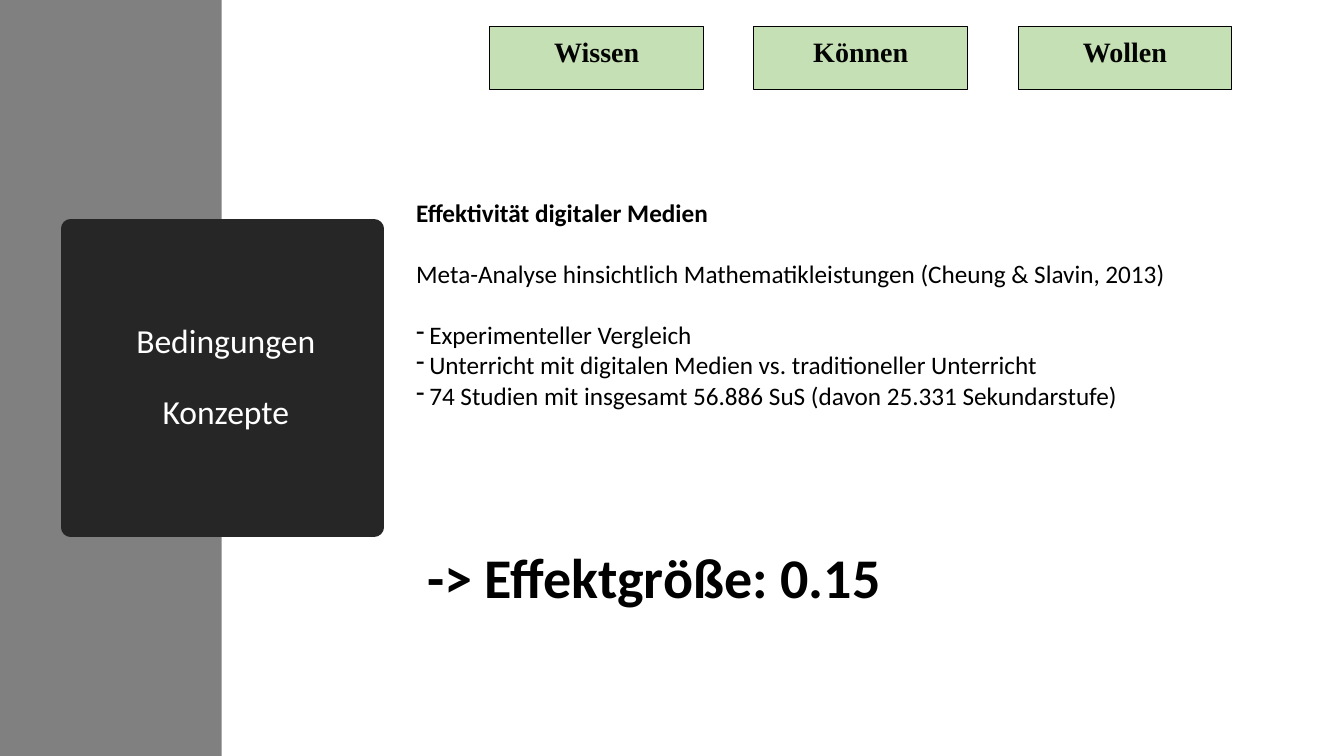
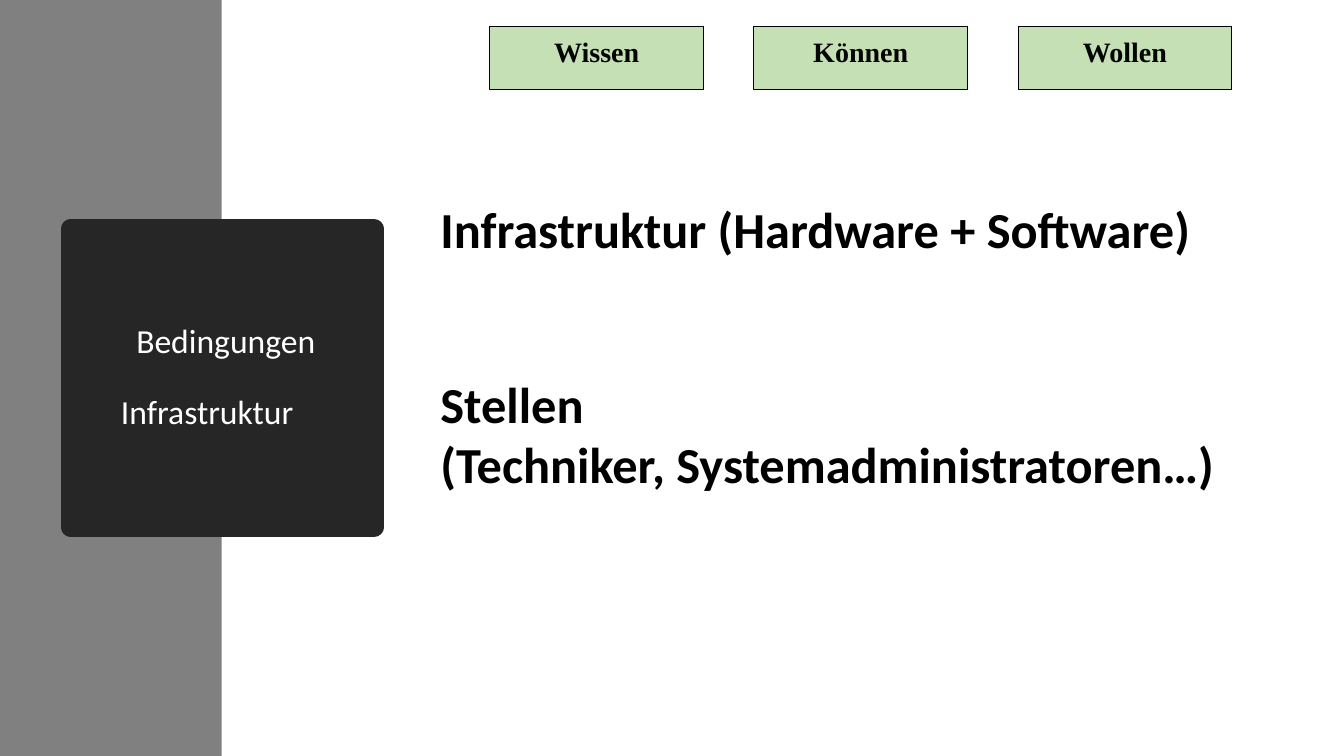
from pptx import Presentation
from pptx.dml.color import RGBColor
from pptx.enum.shapes import MSO_SHAPE as Shape
from pptx.enum.text import MSO_ANCHOR as Anchor, MSO_AUTO_SIZE as AutoSize, PP_ALIGN as Align
from pptx.oxml.ns import qn
from pptx.util import Inches, Pt
from lxml import etree

# Colours
GREY = RGBColor(0x80, 0x80, 0x80)
CHARCOAL = RGBColor(0x26, 0x26, 0x26)
GREEN = RGBColor(0xC5, 0xE0, 0xB4)
BLACK = RGBColor(0x00, 0x00, 0x00)
SOFT_BLACK = RGBColor(0x04, 0x04, 0x04)
WHITE = RGBColor(0xFF, 0xFF, 0xFF)

# Text styles
TITLE = dict(name="Calibri", size=Pt(24), bold=False, color=WHITE)
CHIP = dict(name="Times New Roman", size=Pt(20), bold=True, color=SOFT_BLACK)
BODY = dict(name="Calibri", size=Pt(18), bold=False, color=BLACK)
STRONG = {**BODY, "bold": True}
HEADING = {**STRONG, "size": Pt(36)}
RESULT = {**STRONG, "size": Pt(40)}

CHIPS = ("Wissen", "Können", "Wollen")


def set_all(target, values):
    for name, value in values.items():
        setattr(target, name, value)


class Deck:
    """Holds the style and the current page; lengths are percent of the slide."""

    def __init__(self):
        self.deck = Presentation()
        self.deck.slide_width = Inches(13.33)
        self.deck.slide_height = Inches(7.5)
        self.page = None

    def place(self, left, top, width, height):
        across, down = self.deck.slide_width / 100, self.deck.slide_height / 100
        return [round(length) for length in
                (left * across, top * down, width * across, height * down)]

    def paragraph(self, frame, text, style, first=False, gap=0,
                  align=Align.LEFT, indent=0, bullet=None):
        para = frame.paragraphs[0] if first else frame.add_paragraph()
        props = para._p.get_or_add_pPr()
        if indent:
            props.set("marL", str(Inches(indent)))
        if bullet:
            props.set("indent", str(-Inches(indent)))
            etree.SubElement(props, qn("a:buChar")).set("char", bullet)
        set_all(para, dict(alignment=align, space_before=Pt(gap)))
        span = para.add_run()
        span.text = text
        set_all(span.font, {key: value for key, value in style.items() if key != "color"})
        span.font.color.rgb = style["color"]
        return para

    def block(self, area, fill):
        shape = self.page.shapes.add_shape(Shape.RECTANGLE, *self.place(*area))
        shape.shadow.inherit = False
        shape.fill.solid()
        shape.fill.fore_color.rgb = fill
        shape.line.fill.background()
        return shape

    def chip(self, column, label):
        shape = self.block((36.45 + 19.65 * column, 3.47, 15.9, 8.4), GREEN)
        shape.line.color.rgb = BLACK
        shape.line.width = Pt(0.75)
        frame = shape.text_frame
        set_all(frame, dict(word_wrap=False, vertical_anchor=Anchor.MIDDLE,
                            margin_top=Inches(0.05), margin_bottom=Inches(0.18)))
        self.paragraph(frame, label, CHIP, first=True, align=Align.CENTER)

    def title(self, topic, topic_layout):
        title = self.page.shapes.title
        # Bring the title in front of the side band
        title.element.getparent().append(title.element)
        set_all(title, dict(zip(("left", "top", "width", "height"),
                                self.place(5.25, 30.27, 22.58, 39.47))))
        title.fill.solid()
        title.fill.fore_color.rgb = CHARCOAL
        title.line.color.rgb = CHARCOAL
        title.line.width = Pt(13.75)
        frame = title.text_frame
        set_all(frame, dict(word_wrap=True, auto_size=AutoSize.NONE,
                            vertical_anchor=Anchor.MIDDLE))
        lines = [
            self.paragraph(frame, "Bedingungen", TITLE, first=True,
                           align=Align.CENTER, indent=0.07),
            self.paragraph(frame, topic, TITLE, gap=25, **topic_layout),
        ]
        for para in lines:
            para.line_spacing = 0.9

    def new_page(self, topic, **topic_layout):
        self.page = self.deck.slides.add_slide(self.deck.slide_layouts[5])
        self.block((0, 0, 16.5, 100), GREY)
        self.title(topic, topic_layout)
        for column, label in enumerate(CHIPS):
            self.chip(column, label)

    def text(self, area, *lines):
        """Each line is a text, a style and optional paragraph settings."""
        box = self.page.shapes.add_textbox(*self.place(*area))
        box.text_frame.word_wrap = True
        for number, (words, style, *settings) in enumerate(lines):
            self.paragraph(box.text_frame, words, style, first=number == 0,
                           **(settings[0] if settings else {}))

    def save(self):
        self.deck.save("out.pptx")


def main():
    deck = Deck()
    gap = dict(gap=22)
    dash = dict(bullet="-", indent=0.13)

    # Concepts: effectiveness of digital media
    deck.new_page("Konzepte", align=Align.CENTER)
    deck.text(
        (30.23, 25.47, 69, 28),
        ("Effektivität digitaler Medien", STRONG),
        ("Meta-Analyse hinsichtlich Mathematikleistungen (Cheung & Slavin, 2013)", BODY, gap),
        ("Experimenteller Vergleich", BODY, {**gap, **dash}),
        ("Unterricht mit digitalen Medien vs. traditioneller Unterricht", BODY, dash),
        ("74 Studien mit insgesamt 56.886 SuS (davon 25.331 Sekundarstufe)", BODY, dash),
    )
    deck.text((31.05, 71.07, 50, 10.4), ("-> Effektgröße: 0.15", RESULT))

    # Infrastructure: equipment and staff
    deck.new_page("Infrastruktur", align=Align.LEFT, indent=0.4)
    deck.text((32.03, 25.6, 67, 9.5), ("Infrastruktur (Hardware + Software)", HEADING))
    deck.text((32.03, 48.67, 67, 17.5),
              ("Stellen", HEADING),
              ("(Techniker, Systemadministratoren…)", HEADING))

    deck.save()


if __name__ == "__main__":
    main()
